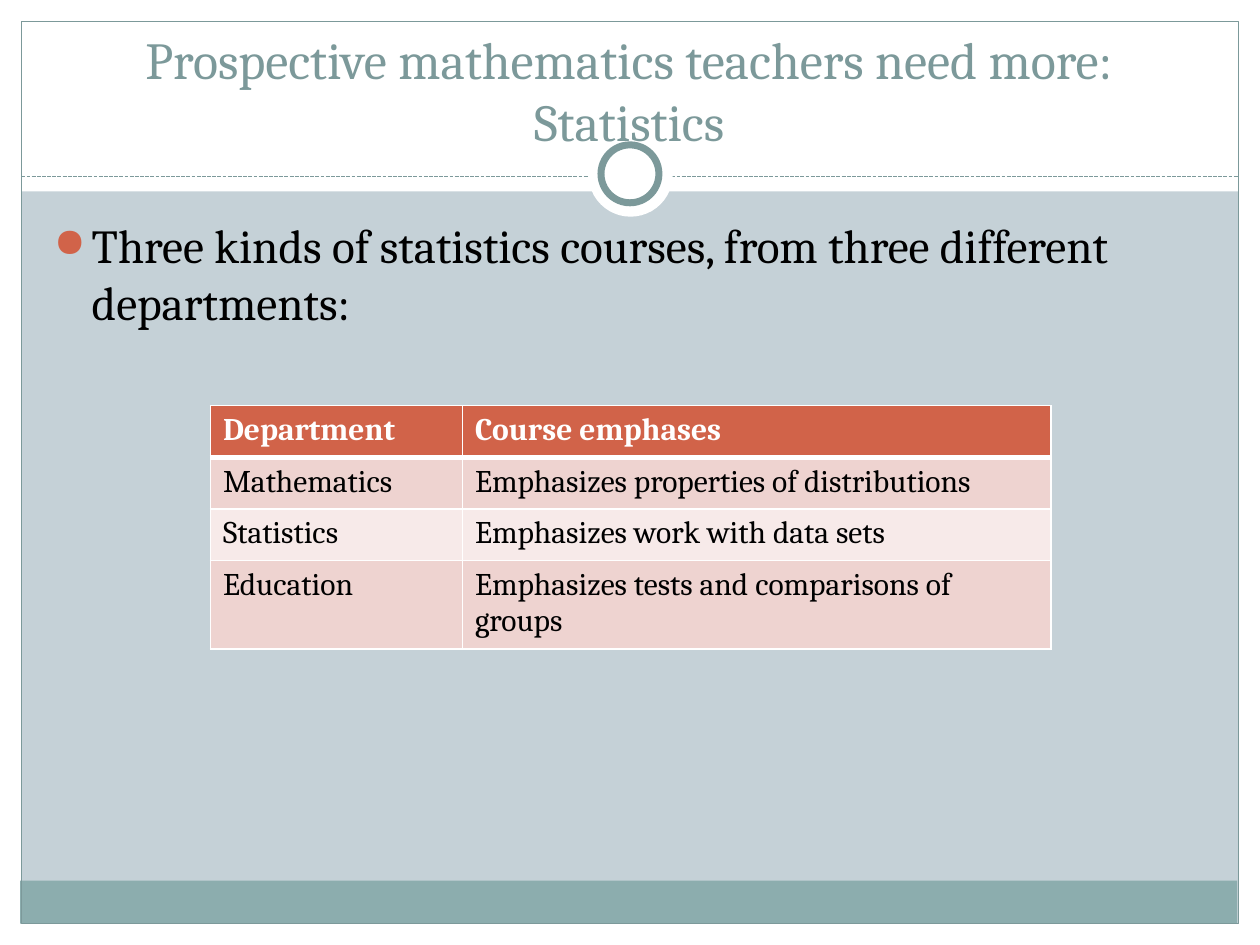
from lxml.etree import SubElement
from pptx import Presentation
from pptx.dml.color import RGBColor
from pptx.enum.dml import MSO_LINE
from pptx.enum.shapes import MSO_CONNECTOR, MSO_SHAPE
from pptx.enum.text import MSO_ANCHOR, PP_ALIGN
from pptx.oxml.ns import qn
from pptx.util import Inches, Pt

FONT = "Cambria"
WHITE, BLACK, TEAL, ACCENT = "FFFFFF", "000000", "7C999A", "D16349"
TITLE = "Prospective mathematics teachers need more: Statistics"
BODY = "Three kinds of statistics courses, from three different departments:"
ROWS = [
    ("Department", "Course emphases"),
    ("Mathematics", "Emphasizes properties of distributions"),
    ("Statistics", "Emphasizes work with data sets"),
    ("Education", "Emphasizes tests and comparisons of groups"),
]
COLUMN_WIDTHS = (2, 4.67)
ROW_HEIGHT = 0.41
BANDS = ("F7EAE9", "EED3D0")
MARGINS = [
    (0, 7.33, 10, 0.17, WHITE),
    (0, 0, 10, 1.52, WHITE),
    (0, 0, 0.17, 7.5, WHITE),
    (9.83, 0, 0.17, 7.5, WHITE),
    (0.16, 6.99, 9.66, 0.34, "8CADAE"),
]


def color(value):
    return RGBColor.from_string(value)


def add_box(slide, kind, left, top, width, height, fill=None, line=None, weight=0.75):
    shape = slide.shapes.add_shape(
        kind, Inches(left), Inches(top), Inches(width), Inches(height))
    shape.shadow.inherit = False
    if fill:
        shape.fill.solid()
        shape.fill.fore_color.rgb = color(fill)
    else:
        shape.fill.background()
    if line:
        shape.line.color.rgb = color(line)
        shape.line.width = Pt(weight)
    else:
        shape.line.fill.background()


def add_divider(slide):
    divider = slide.shapes.add_connector(
        MSO_CONNECTOR.STRAIGHT, Inches(0.17), Inches(1.4), Inches(9.83), Inches(1.4))
    divider.line.color.rgb = color(TEAL)
    divider.line.width = Pt(0.75)
    divider.line.dash_style = MSO_LINE.SQUARE_DOT
    SubElement(divider._element.spPr, qn("a:effectLst"))


def add_run(paragraph, text, size, text_color, bold=False):
    run = paragraph.add_run()
    run.text = text
    run.font.name = FONT
    run.font.size = Pt(size)
    run.font.bold = bold
    run.font.color.rgb = color(text_color)


def place_title(slide):
    title = slide.shapes.title
    title.left, title.top = Inches(0.33), Inches(0.43)
    title.width, title.height = Inches(9.33), Inches(0.83)
    title.text_frame.word_wrap = True
    title.text_frame.vertical_anchor = MSO_ANCHOR.BOTTOM
    paragraph = title.text_frame.paragraphs[0]
    paragraph.alignment = PP_ALIGN.CENTER
    add_run(paragraph, TITLE, 29.7, TEAL)
    slide.shapes._spTree.append(title._element)


def add_body(slide):
    box = slide.shapes.add_textbox(Inches(0.33), Inches(1.67), Inches(9.3), Inches(5))
    box.text_frame.word_wrap = True
    paragraph = box.text_frame.paragraphs[0]
    paragraph.space_before = Pt(5.4)
    properties = paragraph._p.get_or_add_pPr()
    properties.set("marL", str(Inches(0.3)))
    properties.set("indent", str(-Inches(0.3)))
    bullet_color = SubElement(properties, qn("a:buClr"))
    SubElement(bullet_color, qn("a:srgbClr"), val=ACCENT)
    SubElement(properties, qn("a:buSzPct"), val="85000")
    SubElement(properties, qn("a:buChar"), char="●")
    add_run(paragraph, BODY, 27, BLACK)


def set_borders(cell, weights):
    properties = cell._tc.get_or_add_tcPr()
    for position, (side, weight) in enumerate(weights.items()):
        border = properties.makeelement(qn(f"a:{side}"), {"w": str(Pt(weight))})
        fill = SubElement(border, qn("a:solidFill"))
        SubElement(fill, qn("a:srgbClr"), val=WHITE)
        properties.insert(position, border)


def add_courses_table(slide):
    table = slide.shapes.add_table(
        len(ROWS), len(COLUMN_WIDTHS), Inches(1.67), Inches(3.22),
        Inches(sum(COLUMN_WIDTHS)), Inches(ROW_HEIGHT * len(ROWS))).table
    for column, width in zip(table.columns, COLUMN_WIDTHS):
        column.width = Inches(width)
    for row_index, texts in enumerate(ROWS):
        table.rows[row_index].height = Inches(ROW_HEIGHT)
        header = row_index == 0
        for column_index, text in enumerate(texts):
            cell = table.cell(row_index, column_index)
            cell.fill.solid()
            cell.fill.fore_color.rgb = color(ACCENT if header else BANDS[row_index % 2])
            set_borders(cell, {"lnL": 1, "lnR": 1, "lnT": 3 if row_index == 1 else 1,
                               "lnB": 3 if header else 1})
            add_run(cell.text_frame.paragraphs[0], text, 18,
                    WHITE if header else BLACK, header)


def main():
    """Build the statistics courses slide."""
    presentation = Presentation()
    presentation.slide_width, presentation.slide_height = Inches(10), Inches(7.5)
    slide = presentation.slides.add_slide(presentation.slide_layouts[5])
    slide.background.fill.solid()
    slide.background.fill.fore_color.rgb = color("C5D1D7")
    for left, top, width, height, fill in MARGINS:
        add_box(slide, MSO_SHAPE.RECTANGLE, left, top, width, height, fill)
    add_box(slide, MSO_SHAPE.RECTANGLE, 0.17, 0.17, 9.66, 7.16, line=TEAL)
    add_divider(slide)
    add_box(slide, MSO_SHAPE.OVAL, 4.67, 1.05, 0.67, 0.67, WHITE)
    add_box(slide, MSO_SHAPE.OVAL, 4.77, 1.15, 0.46, 0.46, WHITE, TEAL, 4)
    place_title(slide)
    add_body(slide)
    add_courses_table(slide)
    presentation.save("out.pptx")


if __name__ == "__main__":
    main()
